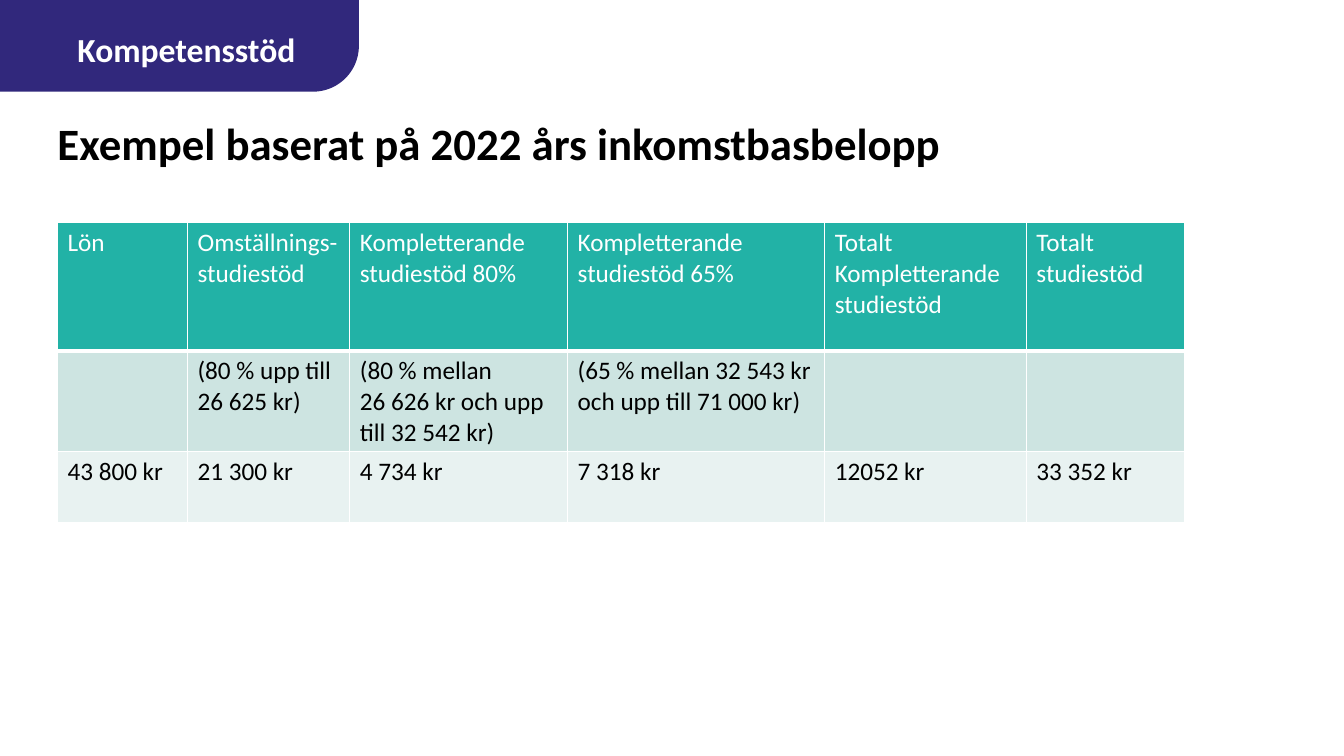
from lxml import etree
from pptx import Presentation
from pptx.dml.color import RGBColor
from pptx.enum.shapes import MSO_SHAPE
from pptx.enum.text import MSO_ANCHOR, MSO_AUTO_SIZE, PP_ALIGN
from pptx.oxml.ns import qn
from pptx.util import Inches, Pt

ROUND_ONE = MSO_SHAPE.ROUND_1_RECTANGLE
TOP = MSO_ANCHOR.TOP
LEFT = PP_ALIGN.LEFT
NO_FIT = MSO_AUTO_SIZE.NONE
TITLE_ONLY = 5

WHITE = RGBColor(0xFF, 0xFF, 0xFF)
BLACK = RGBColor(0x00, 0x00, 0x00)
PURPLE = RGBColor(0x31, 0x28, 0x7C)
TEAL = RGBColor(0x22, 0xB2, 0xA6)
MINT = RGBColor(0xCD, 0xE4, 0xE1)
PALE = RGBColor(0xE8, 0xF2, 0xF1)

COLUMNS = [1.29, 1.61, 2.16, 2.55, 2, 1.57]
ROW_STYLES = [(1.27, TEAL, WHITE), (1, MINT, BLACK), (0.7, PALE, BLACK)]
ROWS = [
    ["Lön", "Omställnings-studiestöd", "Kompletterande studiestöd 80%",
     "Kompletterande studiestöd 65%", "Totalt\vKompletterande studiestöd",
     "Totalt studiestöd"],
    ["", "(80 % upp till 26 625 kr)",
     "(80 % mellan \v26 626 kr och upp till 32 542 kr)",
     "(65 % mellan 32 543 kr och upp till 71 000 kr)", "", ""],
    ["43 800 kr", "21 300 kr", "4 734 kr", "7 318 kr", "12052 kr", "33 352 kr"],
]


def format_text(p, size, color, bold=False):
    """Apply the slide's font to a paragraph."""
    style = {"name": "Calibri", "size": Pt(size), "bold": bold}
    for name, value in style.items():
        setattr(p.font, name, value)
    p.font.color.rgb = color


def add_tab(slide, x, y, w, h):
    """Draw the coloured corner tab with its label."""
    sp = slide.shapes.add_shape(ROUND_ONE, Inches(x), Inches(y), Inches(w), Inches(h))
    sp.adjustments[0] = 0.5
    sp.shadow.inherit = False
    sp.fill.solid()
    sp.fill.fore_color.rgb = PURPLE
    sp.line.fill.background()
    sp._element.spPr.find(qn("a:xfrm")).set("flipV", "1")
    label = slide.shapes.add_textbox(
        Inches(x + 0.67), Inches(y + 0.24), Inches(w - 1), Inches(0.5))
    tf = label.text_frame
    tf.word_wrap = True
    p = tf.paragraphs[0]
    p.text = "Kompetensstöd"
    format_text(p, 24, WHITE, True)


def set_title(slide, x, y, w, h):
    """Place and fill the title placeholder."""
    sp = slide.shapes.title
    box = {"left": x, "top": y, "width": w, "height": h}
    for name, value in box.items():
        setattr(sp, name, Inches(value))
    tf = sp.text_frame
    layout = {"margin_left": 0, "margin_top": 0, "margin_right": 0,
              "margin_bottom": 0, "vertical_anchor": TOP,
              "word_wrap": True, "auto_size": NO_FIT}
    for name, value in layout.items():
        setattr(tf, name, value)
    p = tf.paragraphs[0]
    p.text = "Exempel baserat på 2022 års inkomstbasbelopp"
    p.alignment = LEFT
    format_text(p, 32, BLACK, True)


def set_borders(cell, widths):
    """Give a cell white borders of the given widths in points."""
    tc_pr = cell._tc.get_or_add_tcPr()
    for i, (side, width) in enumerate(widths.items()):
        ln = etree.Element(qn(f"a:ln{side}"), w=str(Pt(width)))
        fill = etree.SubElement(ln, qn("a:solidFill"))
        etree.SubElement(fill, qn("a:srgbClr"), val=str(WHITE))
        tc_pr.insert(i, ln)


def add_support_table(slide, x, y):
    """Draw the table of study support amounts."""
    width = sum(COLUMNS)
    height = sum(style[0] for style in ROW_STYLES)
    table = slide.shapes.add_table(
        len(ROWS), len(COLUMNS), Inches(x), Inches(y),
        Inches(width), Inches(height)).table
    for column, w in zip(table.columns, COLUMNS):
        column.width = Inches(w)
    for i, (texts, (h, fill, color)) in enumerate(zip(ROWS, ROW_STYLES)):
        table.rows[i].height = Inches(h)
        widths = {"L": 1, "R": 1, "T": 3 if i == 1 else 1, "B": 3 if i == 0 else 1}
        for cell, text in zip(table.rows[i].cells, texts):
            cell.fill.solid()
            cell.fill.fore_color.rgb = fill
            p = cell.text_frame.paragraphs[0]
            p.text = text
            format_text(p, 18, color)
            set_borders(cell, widths)


def main():
    """Build and save the slide."""
    prs = Presentation()
    prs.slide_width, prs.slide_height = Inches(13.33), Inches(7.5)
    slide = prs.slides.add_slide(prs.slide_layouts[TITLE_ONLY])
    add_tab(slide, 0, 0, 3.56, 0.91)
    set_title(slide, 0.57, 1.15, 12, 1.06)
    add_support_table(slide, 0.57, 2.21)
    prs.save("out.pptx")


if __name__ == "__main__":
    main()
